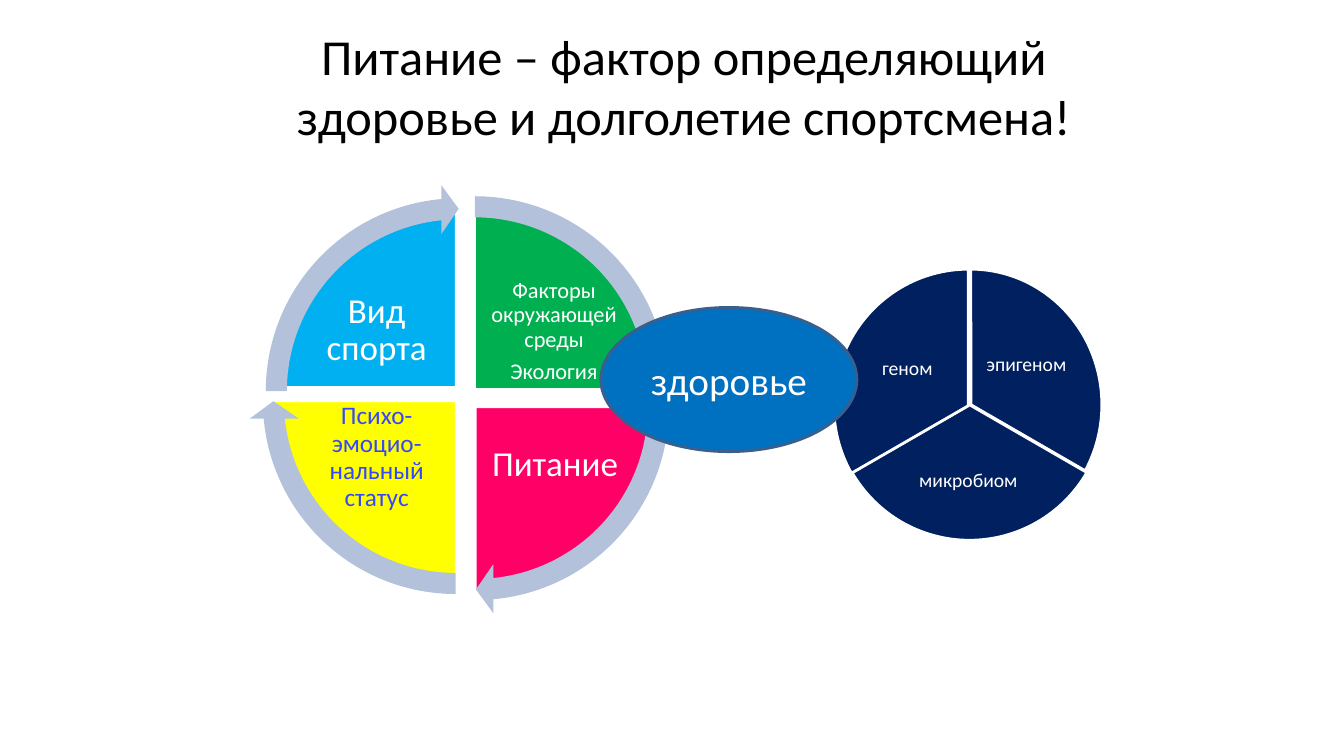
import pptx
import pptx.dml.color
import pptx.enum.shapes
import pptx.enum.text
import pptx.util

WIDTH, HEIGHT = 13.33, 7.5
FULL_TURN = 216
QUARTER, THIRD = FULL_TURN / 4, FULL_TURN / 3
TOP = 162
WHITE, NAVY, RING = "FFFFFF", "002060", "B3C1DB"
KIND = pptx.enum.shapes.MSO_SHAPE

QUADRANT_SIZE = (27.38, 48.67)
LABEL_SIZE = (10.13, 13.33)
ARROW_SIZE = (30.76, 54.67)
QUADRANTS = [
    ((21.61, 27.2), "00B050", (36.16, 37.2), (19.95, 24.13),
     ["Факторы окружающей среды", "Экология"], 16, WHITE),
    ((21.68, 29.47), "FF0066", (36.23, 54.8), (20.03, 26.53),
     ["Питание"], 25, WHITE),
    ((20.26, 28.67), "FFFF00", (22.96, 53.87), (18.53, 25.73),
     ["Психо-эмоцио-нальный статус"], 18, "3548FB"),
    ((20.26, 26.93), "00B0F0", (22.96, 37.07), (18.75, 24.4),
     ["Вид спорта"], 25, WHITE),
]
SECTORS = [
    ((62.49, 35.6, 19.5, 35.87), (73.07, 42.27, 6.6, 12), "эпигеном"),
    ((62.04, 35.6, 20.18, 35.87), (67.52, 58.13, 9.08, 11.07), "микробиом"),
    ((62.04, 35.6, 20.03, 36.13), (64.14, 42.8, 6.75, 12), "геном"),
]


def rgb(value):
    return pptx.dml.color.RGBColor.from_string(value)


def set_all(target, values):
    for name, value in values.items():
        setattr(target, name, value)


def place(x, y, w, h):
    shares = ((x, WIDTH), (y, HEIGHT), (w, WIDTH), (h, HEIGHT))
    return [pptx.util.Inches(share * side / 100) for share, side in shares]


def add_shape(shapes, kind, box, fill, line=None, adjustments=()):
    sp = shapes.add_shape(kind, *place(*box))
    sp.shadow.inherit = False
    sp.fill.solid()
    sp.fill.fore_color.rgb = rgb(fill)
    if line:
        sp.line.color.rgb = rgb(line)
        sp.line.width = pptx.util.Pt(2)
    else:
        sp.line.fill.background()
    for i, value in enumerate(adjustments):
        sp.adjustments[i] = value
    return sp


def write(sp, lines, size, color, inset, spacing=None):
    tf = sp.text_frame
    margins = ("margin_left", "margin_top", "margin_right", "margin_bottom")
    set_all(tf, dict.fromkeys(margins, pptx.util.Inches(inset)))
    set_all(tf, {"word_wrap": True,
                 "vertical_anchor": pptx.enum.text.MSO_ANCHOR.MIDDLE})
    for i, line in enumerate(lines):
        p = tf.add_paragraph() if i else tf.paragraphs[0]
        p.alignment = pptx.enum.text.PP_ALIGN.CENTER
        if spacing:
            set_all(p, {"line_spacing": spacing,
                        "space_after": pptx.util.Pt(size * 0.35)})
        r = p.add_run()
        r.text = line
        set_all(r.font, {"name": "Calibri", "size": pptx.util.Pt(size)})
        r.font.color.rgb = rgb(color)


def add_label(shapes, box, lines, size, color):
    sp = shapes.add_textbox(*place(*box))
    write(sp, lines, size, color, 0.02, 0.9)


def add_sector(shapes, box, fill, start, sweep):
    angles = (start % FULL_TURN, (start + sweep) % FULL_TURN)
    add_shape(shapes, KIND.PIE, box, fill, WHITE, angles)


def add_ring_arrow(shapes, corner, start):
    tip = 3.275
    add_shape(shapes, KIND.CIRCULAR_ARROW, corner + ARROW_SIZE, RING,
              adjustments=(0.051, tip, start + QUARTER - tip, start, 0.059))


def add_factor_wheel(shapes):
    for i, (pie, fill, label, _, lines, size, color) in enumerate(QUADRANTS):
        add_sector(shapes, pie + QUADRANT_SIZE, fill, TOP + i * QUARTER, QUARTER)
        add_label(shapes, label + LABEL_SIZE, lines, size, color)
    for i, quadrant in enumerate(QUADRANTS):
        add_ring_arrow(shapes, quadrant[3], (TOP + i * QUARTER) % FULL_TURN)


def add_genome_wheel(shapes):
    for i, (pie, label, name) in enumerate(SECTORS):
        add_sector(shapes, pie, NAVY, TOP + i * THIRD, THIRD)
        add_label(shapes, label, [name], 14, WHITE)


def main():
    prs = pptx.Presentation()
    set_all(prs, {"slide_width": pptx.util.Inches(WIDTH),
                  "slide_height": pptx.util.Inches(HEIGHT)})
    s = prs.slides.add_slide(prs.slide_layouts[6])
    add_factor_wheel(s.shapes.add_group_shape().shapes)
    add_genome_wheel(s.shapes.add_group_shape().shapes)
    health = add_shape(s.shapes, KIND.OVAL, (44.71, 40.67, 19.05, 19.07),
                       "0070C0", "3A5F8C")
    write(health, ["здоровье"], 28, WHITE, 0.05)
    title = add_shape(s.shapes, KIND.RECTANGLE, (17.7, 3.2, 66.39, 16.13), WHITE)
    write(title, ["Питание – фактор определяющий здоровье и долголетие спортсмена!"],
          36, "000000", 0)
    prs.save("out.pptx")


if __name__ == "__main__":
    main()
